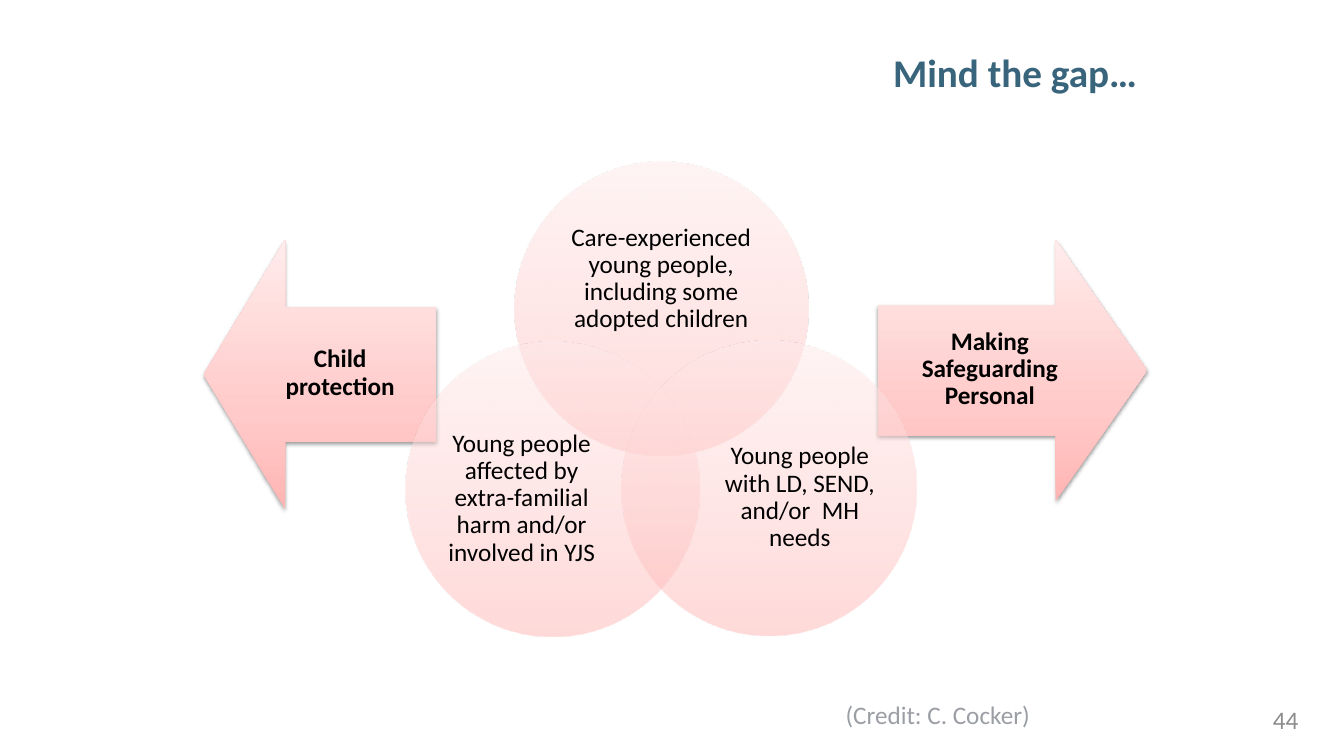
from lxml import etree
from pptx import Presentation
from pptx import util as u
from pptx.dml import color
from pptx.enum import shapes, text
from pptx.oxml import ns

presentation = Presentation()
presentation.slide_width = u.Inches(13.333)
presentation.slide_height = u.Inches(7.5)
COLUMN = presentation.slide_width / 80
ROW = presentation.slide_height / 45

slide = presentation.slides.add_slide(presentation.slide_layouts[5])
items = slide.shapes

BLACK = "000000"
GRADIENT = [(0, "FFB5B3"), (35, "FFCAC9"), (100, "FFEBEB")]
CENTER, RIGHT, LEFT = text.PP_ALIGN.CENTER, text.PP_ALIGN.RIGHT, text.PP_ALIGN.LEFT
MIDDLE, TOP = text.MSO_ANCHOR.MIDDLE, text.MSO_ANCHOR.TOP


def grid(left, top, width, height):
    return [int(left * COLUMN), int(top * ROW), int(width * COLUMN), int(height * ROW)]


def write(shape, wording, hex_color, size=18, bold=False, align=CENTER, anchor=MIDDLE, inset=None, spacing=0.9):
    frame = shape.text_frame
    frame.text = wording
    frame.word_wrap = True
    frame.auto_size = text.MSO_AUTO_SIZE.NONE
    frame.vertical_anchor = anchor
    if inset is not None:
        frame.margin_left = frame.margin_right = u.Inches(inset)
        frame.margin_top = frame.margin_bottom = u.Inches(inset)
    paragraph = frame.paragraphs[0]
    paragraph.alignment = align
    paragraph.line_spacing = spacing
    font = paragraph.runs[0].font
    font.name, font.size, font.bold = "Calibri", u.Pt(size), bold
    font.color.rgb = color.RGBColor.from_string(hex_color)


title = items.title
title.left, title.top, title.width, title.height = grid(11.28, 2.88, 57, 7.44)
write(title, "Mind the gap…", "38647C", 28, True, RIGHT, TOP)

ARROW_LEFT, ARROW_RIGHT = shapes.MSO_SHAPE.LEFT_ARROW, shapes.MSO_SHAPE.RIGHT_ARROW
CIRCLE = shapes.MSO_SHAPE.OVAL
DIAMETER = 17.52

diagram = [
    (ARROW_LEFT, (12.12, 14.28, 13.86, 16.02), (14.52, 18.24, 11.46, 7.98), "Child protection"),
    (ARROW_RIGHT, (52.26, 14.28, 16.02, 15.54), (52.26, 18.12, 13.32, 7.74), "Making Safeguarding Personal"),
    (CIRCLE, (30.6, 9.6, DIAMETER, DIAMETER), (32.94, 12.66, 12.84, 7.86),
     "Care-experienced young people, including some adopted children"),
    (CIRCLE, (37.02, 20.28, DIAMETER, DIAMETER), (42.36, 24.78, 10.5, 9.66),
     "Young people with LD, SEND, and/or  MH needs"),
    (CIRCLE, (24.12, 20.34, DIAMETER, DIAMETER), (25.8, 24.84, 10.5, 9.66),
     "Young people affected by extra-familial harm and/or involved in YJS"),
]

for kind, outline, label_area, wording in diagram:
    is_arrow = kind != CIRCLE
    shape = items.add_shape(kind, *grid(*outline))
    shape.line.fill.background()
    shape.shadow.inherit = False
    properties = shape._element.spPr

    gradient = etree.Element(ns.qn("a:gradFill"), rotWithShape="1")
    stops = etree.SubElement(gradient, ns.qn("a:gsLst"))
    for position, hex_color in GRADIENT:
        stop = etree.SubElement(stops, ns.qn("a:gs"), pos=str(position * 1000))
        tint = etree.SubElement(stop, ns.qn("a:srgbClr"), val=hex_color)
        if not is_arrow:
            etree.SubElement(tint, ns.qn("a:alpha"), val="50000")
    etree.SubElement(gradient, ns.qn("a:lin"), ang="16200000", scaled="1")
    properties.find(ns.qn("a:prstGeom")).addnext(gradient)

    if is_arrow:
        shape.adjustments[0] = 0.5
        shape.adjustments[1] = 0.35
        shadow = etree.SubElement(
            properties.find(ns.qn("a:effectLst")), ns.qn("a:outerShdw"),
            blurRad=str(u.Pt(3.1)), dist=str(u.Pt(1.6)), dir="5400000", rotWithShape="0")
        shade = etree.SubElement(shadow, ns.qn("a:srgbClr"), val=BLACK)
        etree.SubElement(shade, ns.qn("a:alpha"), val="38000")

    label = items.add_textbox(*grid(*label_area))
    write(label, wording, BLACK, bold=is_arrow, inset=0.14 if is_arrow else 0)

page_number = items.add_textbox(*grid(59.22, 41.64, 18.66, 2.4))
write(page_number, "44", "8C8C8C", align=RIGHT, spacing=1.0)

credit = items.add_textbox(*grid(49.74, 41.34, 16.86, 2.4))
write(credit, "(Credit: C. Cocker)", "9B9FA5", align=LEFT, anchor=TOP, spacing=1.0)

presentation.save("out.pptx")
